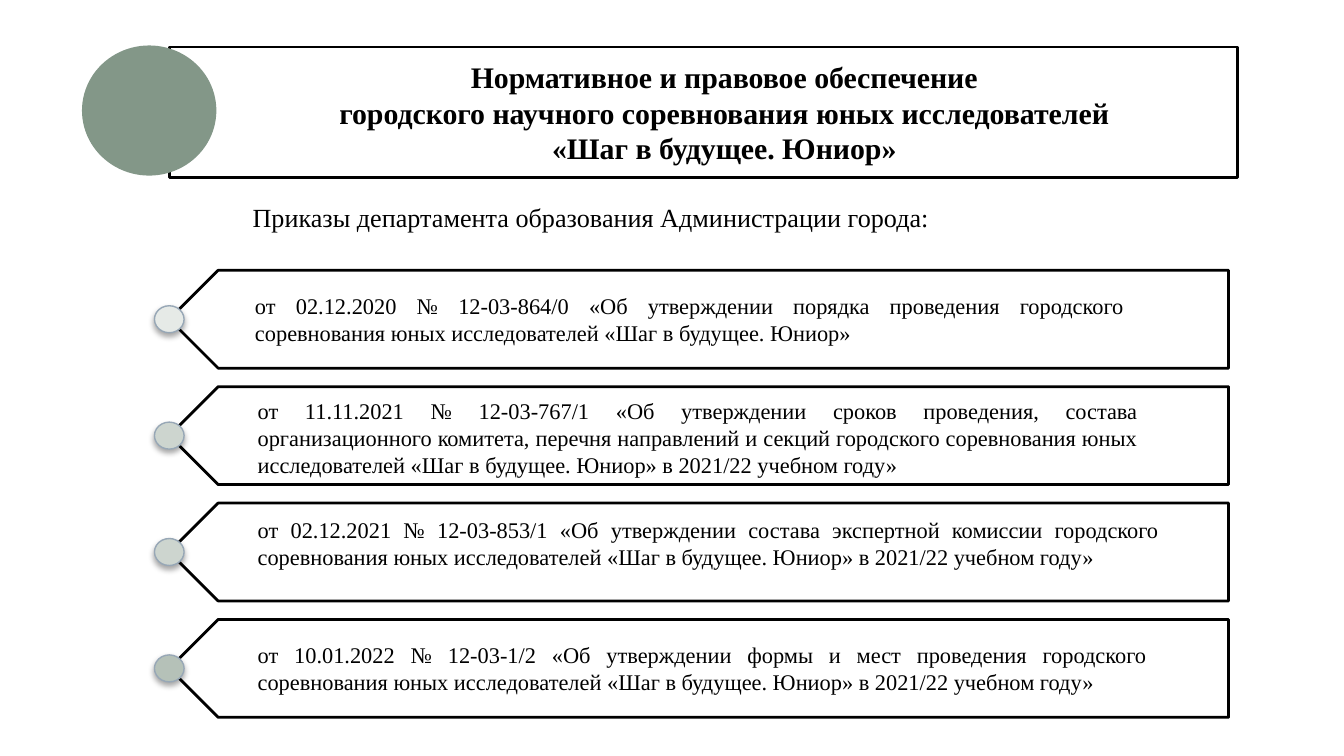
from lxml import etree
from pptx import Presentation
from pptx import util as u
from pptx.dml import color
from pptx.enum import shapes, text
from pptx.oxml import ns


def rgb(value):
    return color.RGBColor.from_string(value)


class SlideBuilder:
    font = "Times New Roman"
    ink = "000000"
    inset = u.Cm(0.25)

    def __init__(self, page):
        self.page = page

    def shape(self, kind, left, top, width, height, fill=None, line=None, weight=1.5):
        item = self.page.shapes.add_shape(
            kind, u.Cm(left), u.Cm(top), u.Cm(width), u.Cm(height))
        item.shadow.inherit = False
        if fill:
            item.fill.solid()
            item.fill.fore_color.rgb = rgb(fill)
        else:
            item.fill.background()
        if line:
            item.line.color.rgb = rgb(line)
            item.line.width = u.Pt(weight)
        else:
            item.line.fill.background()
        return item

    def arrow(self, left, top, width, height):
        """Outlined pentagon that points left."""
        item = self.shape(shapes.MSO_SHAPE.PENTAGON, left, top, width, height, line=self.ink)
        item.adjustments[0] = 0.5
        item._element.spPr.xfrm.set("flipH", "1")

    def dot(self, center_x, center_y, fill):
        """Small oval with a soft shadow below it."""
        width, height = 0.56, 0.51
        item = self.shape(shapes.MSO_SHAPE.OVAL, center_x - width / 2, center_y - height / 2,
                          width, height, fill, "97A7B6", 0.75)
        effects = item._element.spPr.find(ns.qn("a:effectLst"))
        shadow = etree.SubElement(
            effects, ns.qn("a:outerShdw"), blurRad=str(u.Pt(3.1)), dist=str(u.Pt(1.8)),
            dir="5400000", rotWithShape="0")
        tint = etree.SubElement(shadow, ns.qn("a:srgbClr"), val=self.ink)
        etree.SubElement(tint, ns.qn("a:alpha"), val="35000")

    def fill_text(self, box, paragraphs, size, align, bold=False):
        """Fill a box; each paragraph is a list of lines."""
        frame = box.text_frame
        frame.word_wrap = True
        frame.auto_size = text.MSO_AUTO_SIZE.NONE
        frame.vertical_anchor = text.MSO_ANCHOR.MIDDLE
        frame.margin_left = frame.margin_right = self.inset
        frame.margin_top = frame.margin_bottom = self.inset
        for index, lines in enumerate(paragraphs):
            para = frame.add_paragraph() if index else frame.paragraphs[0]
            para.alignment = align
            for number, line in enumerate(lines):
                if number:
                    para.add_line_break()
                span = para.add_run()
                span.text = line
                span.font.name = self.font
                span.font.size = u.Pt(size)
                span.font.bold = bold
                span.font.color.rgb = rgb(self.ink)

    def title(self, left, top, width, height, line, size):
        box = self.page.shapes.title
        box.left, box.top = u.Cm(left), u.Cm(top)
        box.width, box.height = u.Cm(width), u.Cm(height)
        self.fill_text(box, [[line]], size, text.PP_ALIGN.CENTER)

    def textbox(self, left, top, width, height, paragraphs, size, align, bold=False):
        box = self.page.shapes.add_textbox(
            u.Cm(left), u.Cm(top), u.Cm(width), u.Cm(height))
        self.fill_text(box, paragraphs, size, align, bold)


# wording, text left, text width, text shift down, dot colour
ORDERS = [
    ("от 02.12.2020 № 12-03-864/0 «Об утверждении порядка проведения городского "
     "соревнования юных исследователей «Шаг в будущее. Юниор»",
     4.57, 16.94, 0, "E6EAE7"),
    ("от 11.11.2021 № 12-03-767/1 «Об утверждении сроков проведения, состава "
     "организационного комитета, перечня направлений и секций городского соревнования "
     "юных исследователей «Шаг в будущее. Юниор» в 2021/22 учебном году»",
     4.62, 17.15, 0.04, "CDD5CF"),
    ("от 02.12.2021 № 12-03-853/1 «Об утверждении состава экспертной комиссии городского "
     "соревнования юных исследователей «Шаг в будущее. Юниор» в 2021/22 учебном году»",
     4.62, 17.55, -0.17, "CDD5CF"),
    ("от 10.01.2022 № 12-03-1/2 «Об утверждении формы и мест проведения городского "
     "соревнования юных исследователей «Шаг в будущее. Юниор» в 2021/22 учебном году»",
     4.62, 17.32, 0, "B5C1B8"),
]
HEADING = [
    ["Нормативное и правовое обеспечение"],
    ["городского научного соревнования юных исследователей", "«Шаг в будущее. Юниор»"],
]
EDGE = 3.2
ROW_TOP, ROW_STEP, ROW_WIDTH, ROW_HEIGHT = 5.11, 2.2, 20.02, 1.85


def main():
    deck = Presentation()
    deck.slide_width, deck.slide_height = u.Cm(25.4), u.Cm(14.29)
    title_only = deck.slide_layouts[5]
    builder = SlideBuilder(deck.slides.add_slide(title_only))

    builder.title(0.45, 3.4, 21.44, 1.42,
                  "Приказы департамента образования Администрации города:", 14)
    builder.shape(shapes.MSO_SHAPE.RECTANGLE, EDGE, 0.89, 20.19, 2.46, line=builder.ink)
    builder.textbox(4.57, 0.89, 18.24, 2.46, HEADING, 16, text.PP_ALIGN.CENTER, bold=True)
    builder.shape(shapes.MSO_SHAPE.OVAL, 1.55, 0.86, 2.54, 2.46, fill="839788")

    for index, (wording, left, width, shift, fill) in enumerate(ORDERS):
        top = ROW_TOP + index * ROW_STEP
        builder.arrow(EDGE, top, ROW_WIDTH, ROW_HEIGHT)
        builder.textbox(left, top + shift, width, ROW_HEIGHT, [[wording]], 12,
                        text.PP_ALIGN.JUSTIFY)
        builder.dot(EDGE, top + ROW_HEIGHT / 2, fill)

    deck.save("out.pptx")


if __name__ == "__main__":
    main()
